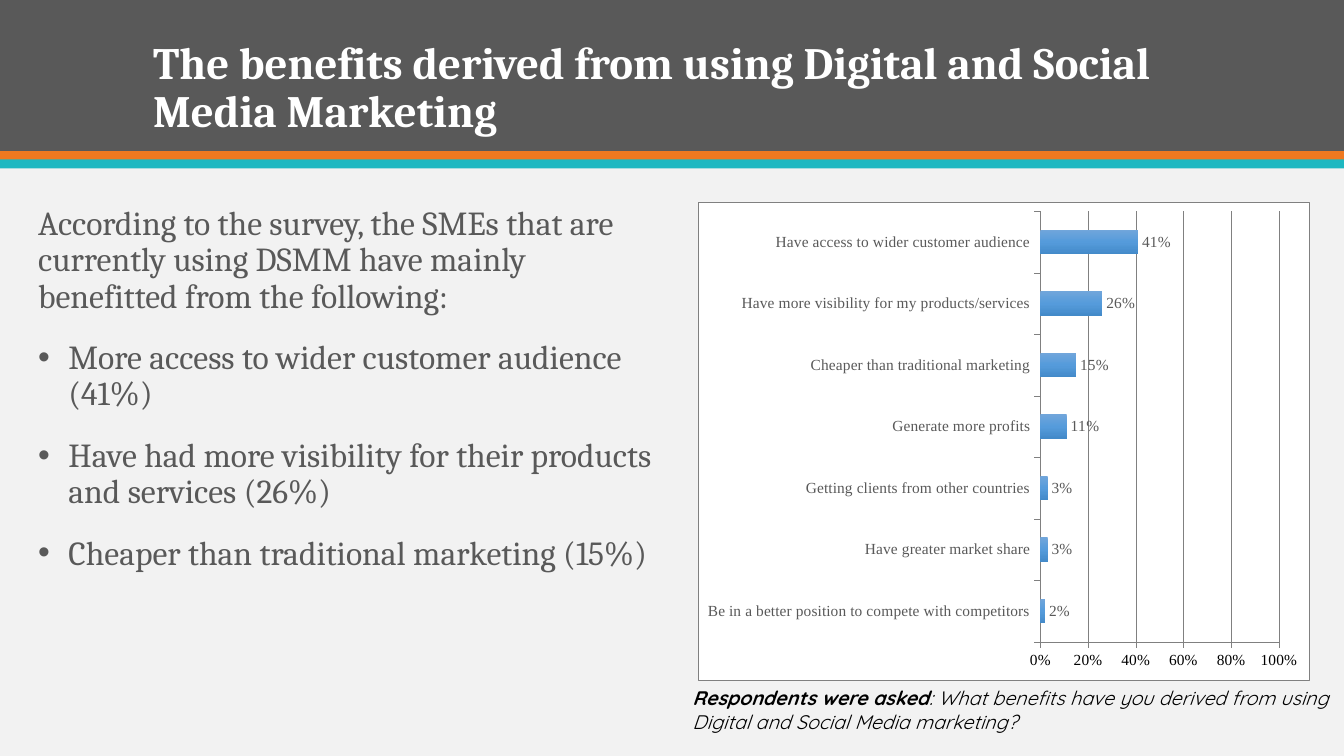
"""Build the slide on the benefits of Digital and Social Media Marketing."""
from copy import deepcopy
from pptx import Presentation
from pptx.chart.data import CategoryChartData
from pptx.dml.color import RGBColor
from pptx.enum.chart import XL_CHART_TYPE, XL_LABEL_POSITION, XL_TICK_MARK
from pptx.enum.shapes import MSO_SHAPE
from pptx.enum.text import MSO_ANCHOR
from pptx.oxml import parse_xml
from pptx.oxml.ns import nsdecls
from pptx.util import Inches, Pt

BAR = XL_CHART_TYPE.BAR_CLUSTERED
OUTSIDE_END = XL_LABEL_POSITION.OUTSIDE_END
TICK_OUT, TICK_NONE = XL_TICK_MARK.OUTSIDE, XL_TICK_MARK.NONE
RECTANGLE = MSO_SHAPE.RECTANGLE
TOP, BOTTOM = MSO_ANCHOR.TOP, MSO_ANCHOR.BOTTOM

TITLE = "The benefits derived from using Digital and Social Media Marketing"
INTRO = ("According to the survey, the SMEs that are currently using DSMM "
         "have mainly benefitted from the following:")
BULLETS = [
    "More access to wider customer audience (41%)",
    "Have had more visibility for their products and services (26%)",
    "Cheaper than traditional marketing (15%)",
]
QUESTION = [
    ("Respondents were asked", True),
    (": What benefits have you derived from using Digital and Social Media marketing?", False),
]
BENEFITS = [
    ("Be in a better position to compete with competitors", 0.02),
    ("Have greater market share", 0.03),
    ("Getting clients from other countries", 0.03),
    ("Generate more profits", 0.11),
    ("Cheaper than traditional marketing", 0.15),
    ("Have more visibility for my products/services", 0.26),
    ("Have access to wider customer audience", 0.41),
]

THEME = {
    "background": "F2F2F2", "band": "595959", "orange": "EF7920", "teal": "1EB8C1",
    "title": "FFFFFF", "body": "595959", "black": "000000",
    "chart": "FFFFFF", "rule": "808080",
    "bar": [(0, "71A6DB"), (0.5, "559BDB"), (1, "438AC9")],
    "serif": "Cambria", "caption font": "Quicksand",
    "chart font": "Calibri", "label font": "Times New Roman",
    "title size": 32, "body size": 24, "caption size": 14,
    "label size": 11, "chart size": 10, "rule width": 0.25,
}

SLIDE_W, SLIDE_H = 13.33, 7.5
BANDS = [("band", 0, 1.5), ("orange", 1.5, 0.09), ("teal", 1.58, 0.09)]
TITLE_BOX = (1.42, 0.28, 10.5, 1.13)
BODY_BOX = (0.28, 2, 6.49, 4.75)
CHART_BOX = (6.92, 2, 6.07, 4.75)
CAPTION_BOX = (6.77, 6.76, 6.67, 0.57)
PLOT_LAYOUT = {"x": 0.56, "y": 0.02, "w": 0.39, "h": 0.9}
BULLET_INDENT = Inches(0.3)


def color(name):
    return RGBColor.from_string(THEME[name])


def style_font(font, size, family, tint, bold=False, italic=False):
    font.size, font.name = Pt(THEME[size]), THEME[family]
    font.bold, font.italic = bold, italic
    font.color.rgb = color(tint)


def style_rule(line):
    line.color.rgb = color("rule")
    line.width = Pt(THEME["rule width"])


def add_text_frame(slide, box, anchor=TOP):
    frame = slide.shapes.add_textbox(*map(Inches, box)).text_frame
    frame.word_wrap = True
    frame.vertical_anchor = anchor
    return frame


def add_bands(slide):
    for tint, top, height in BANDS:
        band = slide.shapes.add_shape(RECTANGLE, 0, Inches(top), Inches(SLIDE_W), Inches(height))
        band.shadow.inherit = False
        band.fill.solid()
        band.fill.fore_color.rgb = color(tint)
        band.line.fill.background()


def add_title(slide):
    frame = add_text_frame(slide, TITLE_BOX, BOTTOM)
    frame.text = TITLE
    title = frame.paragraphs[0]
    title.line_spacing = 0.9
    style_font(title.runs[0].font, "title size", "serif", "title", bold=True)


def add_body(slide):
    frame = add_text_frame(slide, BODY_BOX)
    frame.text = "\n".join([INTRO, *BULLETS])
    for number, paragraph in enumerate(frame.paragraphs):
        paragraph.line_spacing = 0.9
        paragraph.space_before = Pt(18)
        style_font(paragraph.runs[0].font, "body size", "serif", "body")
        if number:
            properties = paragraph._p.get_or_add_pPr()
            properties.set("marL", str(BULLET_INDENT))
            properties.set("indent", str(-BULLET_INDENT))
            properties.append(parse_xml(f'<a:buFont {nsdecls("a")} typeface="Arial"/>'))
            properties.append(parse_xml(f'<a:buChar {nsdecls("a")} char="•"/>'))


def add_caption(slide):
    paragraph = add_text_frame(slide, CAPTION_BOX).paragraphs[0]
    for wording, bold in QUESTION:
        run = paragraph.add_run()
        run.text = wording
        style_font(run.font, "caption size", "caption font", "black", bold, italic=True)


def style_axis(axis, tint):
    axis.major_tick_mark, axis.minor_tick_mark = TICK_OUT, TICK_NONE
    style_rule(axis.format.line)
    style_font(axis.tick_labels.font, "label size", "label font", tint)


def style_bars(plot):
    plot.gap_width = 150
    plot.vary_by_categories = False
    bars = plot.series[0]
    bars.invert_if_negative = False
    fill = bars.format.fill
    fill.gradient()
    fill.gradient_angle = 270
    stops = bars._element.xpath("c:spPr/a:gradFill/a:gsLst")[0]
    stops.append(deepcopy(stops[-1]))
    for stop, (position, tint) in zip(fill.gradient_stops, THEME["bar"]):
        stop.position = position
        stop.color.rgb = RGBColor.from_string(tint)
    labels = bars.data_labels
    labels.show_value = True
    labels.number_format, labels.number_format_is_linked = "0%", False
    labels.position = OUTSIDE_END
    style_font(labels.font, "label size", "label font", "body")


def area_format(outline):
    return parse_xml(
        f'<c:spPr {nsdecls("c", "a")}><a:solidFill><a:srgbClr val="{THEME["chart"]}"/>'
        f'</a:solidFill>{outline}</c:spPr>')


def style_areas(chart):
    chart_space = chart._chartSpace
    border = (f'<a:ln w="{Pt(THEME["rule width"])}"><a:solidFill>'
              f'<a:srgbClr val="{THEME["rule"]}"/></a:solidFill></a:ln>')
    chart_space.chart.addnext(area_format(border))
    plot_area = chart_space.chart.plotArea
    plot_area.append(area_format("<a:ln><a:noFill/></a:ln>"))
    for layout in plot_area.xpath("c:layout"):
        plot_area.remove(layout)
    edges = "".join(f'<c:{side}Mode val="edge"/>' for side in "xy")
    extents = "".join(f'<c:{side} val="{share}"/>' for side, share in PLOT_LAYOUT.items())
    plot_area.insert(0, parse_xml(
        f'<c:layout {nsdecls("c")}><c:manualLayout><c:layoutTarget val="inner"/>'
        f'{edges}{extents}</c:manualLayout></c:layout>'))


def add_benefits_chart(slide):
    benefits = CategoryChartData(number_format="0%")
    benefits.categories = [name for name, _ in BENEFITS]
    benefits.add_series("Series 1", [share for _, share in BENEFITS])
    chart = slide.shapes.add_chart(BAR, *map(Inches, CHART_BOX), benefits).chart
    chart.has_legend = chart.has_title = False
    style_font(chart.font, "chart size", "chart font", "black")
    style_axis(chart.category_axis, "body")
    shares = chart.value_axis
    style_axis(shares, "black")
    shares.minimum_scale, shares.maximum_scale, shares.major_unit = 0, 1, 0.2
    shares.tick_labels.number_format = "0%"
    shares.tick_labels.number_format_is_linked = False
    style_rule(shares.major_gridlines.format.line)
    style_bars(chart.plots[0])
    style_areas(chart)


def main():
    deck = Presentation()
    deck.slide_width, deck.slide_height = Inches(SLIDE_W), Inches(SLIDE_H)
    slide = deck.slides.add_slide(deck.slide_layouts[6])
    slide.background.fill.solid()
    slide.background.fill.fore_color.rgb = color("background")
    for add_part in (add_bands, add_title, add_body, add_benefits_chart, add_caption):
        add_part(slide)
    deck.save("out.pptx")


if __name__ == "__main__":
    main()
